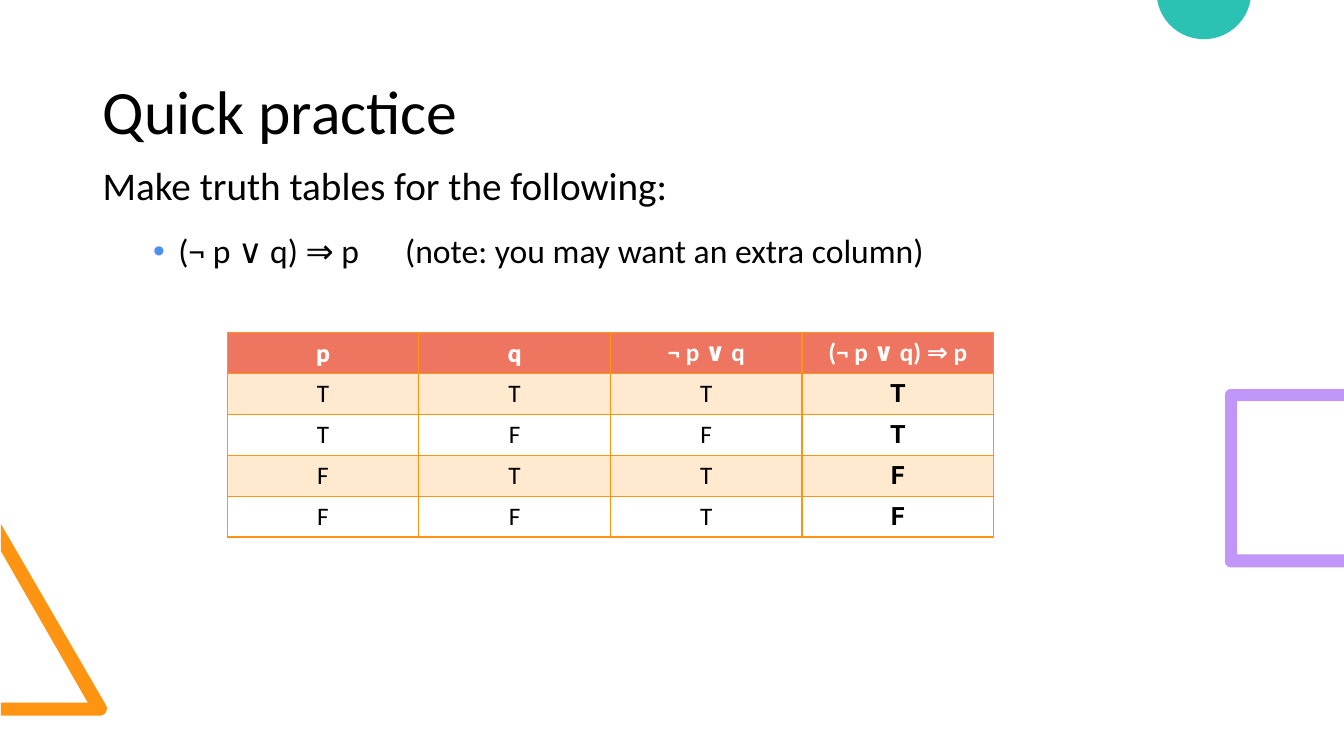
from math import cos, radians, sin

from lxml.etree import SubElement
from pptx import Presentation
from pptx.dml.color import RGBColor
from pptx.enum.text import MSO_ANCHOR, PP_ALIGN
from pptx.oxml import parse_xml
from pptx.oxml.ns import nsdecls, qn
from pptx.util import Inches, Pt

BLACK = RGBColor(0x00, 0x00, 0x00)
WHITE = RGBColor(0xFF, 0xFF, 0xFF)
ORANGE = RGBColor(0xFF, 0x94, 0x13)
TEAL = RGBColor(0x2B, 0xC2, 0xB4)
PURPLE = RGBColor(0xC0, 0x97, 0xF8)
CORAL = RGBColor(0xEE, 0x76, 0x60)
BLUE = RGBColor(0x4D, 0x90, 0xEF)

SLIDE_WIDTH, SLIDE_HEIGHT = Inches(13.33), Inches(7.5)
COLUMN_WIDTH, ROW_HEIGHT = 14.26, 5.41  # percent of the slide

HEADINGS = ["p", "q", "¬ p ∨ q", "(¬ p ∨ q) ⇒ p"]
TRUTH_ROWS = ["TTTT", "TFFT", "FTTF", "FFTF"]


def across(percent):
    return round(SLIDE_WIDTH * percent / 100)


def down(percent):
    return round(SLIDE_HEIGHT * percent / 100)


def area(left, top, width, height):
    return across(left), down(top), across(width), down(height)


def line_xml(tag, color, points):
    return parse_xml(
        f'<a:{tag} {nsdecls("a")} w="{Pt(points)}"><a:solidFill>'
        f'<a:srgbClr val="{color}"/></a:solidFill></a:{tag}>'
    )


def add_text(para, text, size, color=BLACK, font="Calibri", bold=False):
    span = para.add_run()
    span.text = text
    span.font.size = Pt(size)
    span.font.name = font
    span.font.bold = bold
    span.font.color.rgb = color
    return span


def arc(center_x, center_y, radius, start, end, steps=24):
    """Points in inches along an arc, with angles clockwise from the right."""
    angles = [radians(start + (end - start) * i / steps) for i in range(steps + 1)]
    return [(center_x + radius * cos(a), center_y + radius * sin(a)) for a in angles]


def add_outline(page, points, color):
    """Filled outline through points in inches."""
    corners = [(Inches(x), Inches(y)) for x, y in points]
    builder = page.shapes.build_freeform(*corners[0])
    builder.add_line_segments(corners[1:], close=True)
    shape = builder.convert_to_shape()
    shape.shadow.inherit = False
    shape.fill.solid()
    shape.fill.fore_color.rgb = color
    shape.line.fill.background()


def add_decorations(page):
    triangle = [(0.01, 7.1), (0.01, 6.97), (0.87, 6.97), (0.01, 5.47), (0.01, 5.2)]
    add_outline(page, triangle + arc(0.99, 7.03, 0.07, -30, 90), ORANGE)
    add_outline(page, arc(11.94, -0.08, 0.47, 10, 170), TEAL)
    corners = arc(12.21, 3.92, 0.06, 270, 180) + arc(12.21, 5.57, 0.06, 180, 90)
    inside = [(13.33, 5.63), (13.33, 5.5), (12.27, 5.5), (12.27, 3.98), (13.33, 3.98)]
    add_outline(page, [(13.33, 3.86)] + corners + inside, PURPLE)


def set_title(page, text):
    title = page.shapes.title
    title.left, title.top, title.width, title.height = area(6.9, 4.4, 86.27, 21.47)
    frame = title.text_frame
    frame.vertical_anchor = MSO_ANCHOR.MIDDLE
    para = frame.paragraphs[0]
    para.alignment = PP_ALIGN.LEFT
    para.line_spacing = 0.9
    add_text(para, text, 44)


def add_bullet(para):
    properties = para._p.get_or_add_pPr()
    properties.set("marL", str(Inches(0.75)))
    properties.set("indent", str(-Inches(0.25)))
    color = SubElement(properties, qn("a:buClr"))
    SubElement(color, qn("a:srgbClr"), val=str(BLUE))
    SubElement(properties, qn("a:buFont"), typeface="Arial")
    SubElement(properties, qn("a:buChar"), char="•")


def add_body(page, intro, task):
    frame = page.shapes.add_textbox(*area(6.9, 21.4, 67.07, 72.13)).text_frame
    frame.word_wrap = True
    paras = [frame.paragraphs[0], frame.add_paragraph()]
    for para, text, size in zip(paras, (intro, task), (28, 24)):
        para.line_spacing = 0.9
        para.space_before = Pt(10)
        para.space_after = Pt(8)
        add_text(para, text, size)
    paras[1].level = 1
    add_bullet(paras[1])


def fill_cell(cell, row):
    """Coral for the heading, then pale orange on every other row."""
    if row and row % 2 == 0:
        cell.fill.background()
        return
    cell.fill.solid()
    cell.fill.fore_color.rgb = ORANGE if row else CORAL
    if row:
        color = cell._tc.tcPr.find(f".//{qn('a:srgbClr')}")
        SubElement(color, qn("a:alpha"), val="20000")


def border_cell(cell):
    for place, tag in enumerate(("lnL", "lnR", "lnT", "lnB")):
        cell._tc.tcPr.insert(place, line_xml(tag, ORANGE, 1))


def write_cell(cell, row, column, text):
    cell.vertical_anchor = MSO_ANCHOR.MIDDLE
    para = cell.text_frame.paragraphs[0]
    para.alignment = PP_ALIGN.CENTER
    is_result = row > 0 and column == len(HEADINGS) - 1
    span = add_text(para, text, 18, BLACK if row else WHITE,
                    "Roboto" if is_result else "Calibri", is_result or row == 0)
    if row == 0 and column < 2:
        span._r.get_or_add_rPr().insert(0, line_xml("ln", WHITE, 0.75))


def add_truth_table(page):
    rows = [HEADINGS, *TRUTH_ROWS]
    spot = area(16.9, 44, COLUMN_WIDTH * len(HEADINGS), ROW_HEIGHT * len(rows))
    table = page.shapes.add_table(len(rows), len(HEADINGS), *spot).table
    table.horz_banding = False
    for column in table.columns:
        column.width = across(COLUMN_WIDTH)
    for row, texts in enumerate(rows):
        table.rows[row].height = down(ROW_HEIGHT)
        for column, text in enumerate(texts):
            cell = table.cell(row, column)
            write_cell(cell, row, column, text)
            fill_cell(cell, row)
            border_cell(cell)


def main():
    deck = Presentation()
    deck.slide_width, deck.slide_height = SLIDE_WIDTH, SLIDE_HEIGHT
    page = deck.slides.add_slide(deck.slide_layouts.get_by_name("Title Only"))
    add_decorations(page)
    set_title(page, "Quick practice")
    add_body(page, "Make truth tables for the following:",
             "(¬ p ∨ q) ⇒ p\t(note: you may want an extra column)")
    add_truth_table(page)
    deck.save("out.pptx")


if __name__ == "__main__":
    main()
